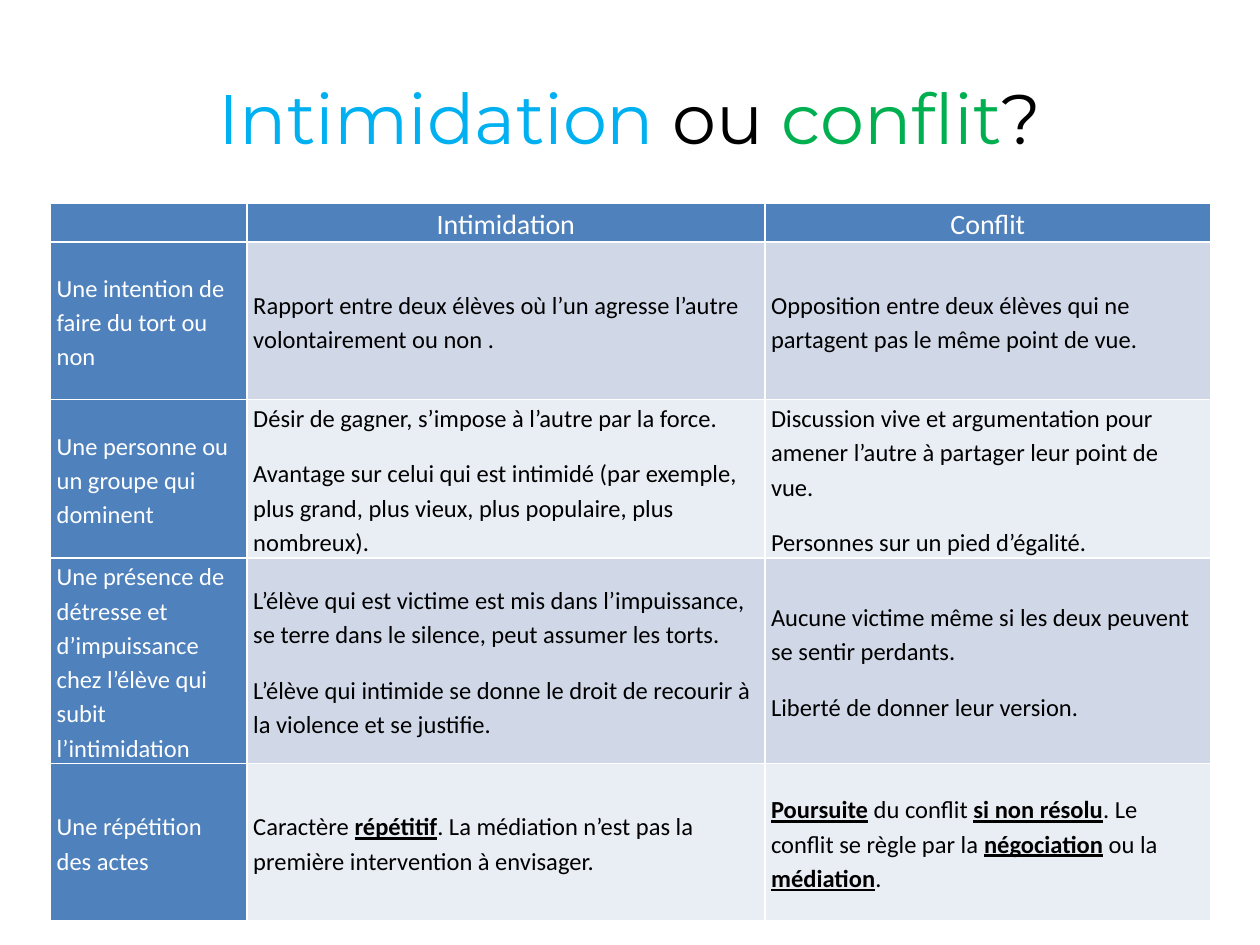
from pptx import Presentation, util as u
from pptx.dml.color import RGBColor
from pptx.enum import text
from pptx.oxml import parse_xml
from pptx.oxml.ns import nsdecls

# Content: **...** marks stressed words, each cell is a list of paragraphs
TITLE = [("Intimidation", "bullying"), (" ou ", "ink"), ("conflit", "conflict"), ("?", "ink")]
ROWS = [
    [[], ["Intimidation"], ["Conflit"]],
    [["Une intention de faire du tort ou non"],
     ["Rapport entre deux élèves où l’un agresse l’autre volontairement ou non ."],
     ["Opposition entre deux élèves qui ne partagent pas le même point de vue."]],
    [["Une personne ou un groupe qui dominent"],
     ["Désir de gagner, s’impose à l’autre par la force.",
      "Avantage sur celui qui est intimidé (par exemple, plus grand, plus vieux, "
      "plus populaire, plus nombreux)."],
     ["Discussion vive et argumentation pour amener l’autre à partager leur point de vue.",
      "Personnes sur un pied d’égalité."]],
    [["Une présence de détresse et d’impuissance chez l’élève qui subit l’intimidation"],
     ["L’élève qui est victime est mis dans l’impuissance, se terre dans le silence, "
      "peut assumer les torts.",
      "L’élève qui intimide se donne le droit de recourir à la violence et se justifie."],
     ["Aucune victime même si les deux peuvent se sentir perdants.",
      "Liberté de donner leur version."]],
    [["Une répétition des actes"],
     ["Caractère **répétitif**. La médiation n’est pas la première intervention à envisager."],
     ["**Poursuite** du conflit **si non résolu**. Le conflit se règle par la "
      "**négociation** ou la **médiation**."]],
]

# Theme and grid
THEME = {
    "color": {"bullying": "00B0F0", "conflict": "00B050", "ink": "000000", "paper": "FFFFFF",
              "head": "4F81BD", "bands": ("D0D8E8", "E9EDF4")},
    "font": {"title": "Montserrat", "table": "Calibri"},
    "size": {"title": 40, "head": 16, "body": 14},
}
COLOR, FONT, SIZE = THEME["color"], THEME["font"], THEME["size"]
COLUMNS = (1.56, 4.11, 3.54)
HEIGHTS = (0.31, 1.25, 1.25, 1.62, 1.25)
TABLE_LEFT, TABLE_TOP = 0.4, 1.61
TITLE_BOX = {"left": 0.5, "top": 0.3, "width": 9, "height": 1.25}
CELL_FORMAT = {"margin_left": u.Inches(0.05), "margin_right": u.Inches(0.05),
               "margin_top": 0, "margin_bottom": 0,
               "vertical_anchor": text.MSO_ANCHOR.MIDDLE}
PARAGRAPH_FORMAT = {"line_spacing": 1.15, "space_before": u.Pt(6), "space_after": u.Pt(6)}


def set_all(target, values):
    for name, value in values.items():
        setattr(target, name, value)


def add_words(paragraph, words, font, size, color, **style):
    run = paragraph.add_run()
    run.text = words
    set_all(run.font, {"name": font, "size": u.Pt(size), **style})
    run.font.color.rgb = RGBColor.from_string(color)


def add_borders(cell):
    for side in "LRTB":
        cell._tc.get_or_add_tcPr().append(parse_xml(
            f'<a:ln{side} {nsdecls("a")} w="{u.Pt(1)}"><a:solidFill>'
            f'<a:srgbClr val="{COLOR["paper"]}"/></a:solidFill></a:ln{side}>'))


def fill_cell(cell, paragraphs, row, column):
    is_head = row == 0 or column == 0
    set_all(cell, CELL_FORMAT)
    add_borders(cell)
    cell.fill.solid()
    cell.fill.fore_color.rgb = RGBColor.from_string(
        COLOR["head"] if is_head else COLOR["bands"][(row - 1) % 2])
    for i, sentence in enumerate(paragraphs):
        frame = cell.text_frame
        paragraph = frame.add_paragraph() if i else frame.paragraphs[0]
        set_all(paragraph, PARAGRAPH_FORMAT)
        paragraph.alignment = text.PP_ALIGN.LEFT if row else text.PP_ALIGN.CENTER
        for part, words in enumerate(sentence.split("**")):
            if words:
                stressed = part % 2 == 1
                add_words(paragraph, words, FONT["table"], SIZE["body" if row else "head"],
                          COLOR["paper" if is_head else "ink"],
                          bold=stressed, underline=stressed)


def main():
    deck = Presentation()
    deck.slide_width, deck.slide_height = u.Inches(10), u.Inches(7.5)
    slide = deck.slides.add_slide(deck.slide_layouts[5])

    # Title
    title = slide.shapes.title
    set_all(title, {side: u.Inches(length) for side, length in TITLE_BOX.items()})
    title.text_frame.vertical_anchor = text.MSO_ANCHOR.MIDDLE
    heading = title.text_frame.paragraphs[0]
    heading.alignment = text.PP_ALIGN.CENTER
    for words, color in TITLE:
        add_words(heading, words, FONT["title"], SIZE["title"], COLOR[color])

    # Comparison table
    comparison = slide.shapes.add_table(
        len(HEIGHTS), len(COLUMNS), u.Inches(TABLE_LEFT), u.Inches(TABLE_TOP),
        u.Inches(sum(COLUMNS)), u.Inches(sum(HEIGHTS))).table
    for column, width in zip(comparison.columns, COLUMNS):
        column.width = u.Inches(width)
    for r, (height, cells) in enumerate(zip(HEIGHTS, ROWS)):
        comparison.rows[r].height = u.Inches(height)
        for c, paragraphs in enumerate(cells):
            fill_cell(comparison.cell(r, c), paragraphs, r, c)

    deck.save("out.pptx")


if __name__ == "__main__":
    main()
